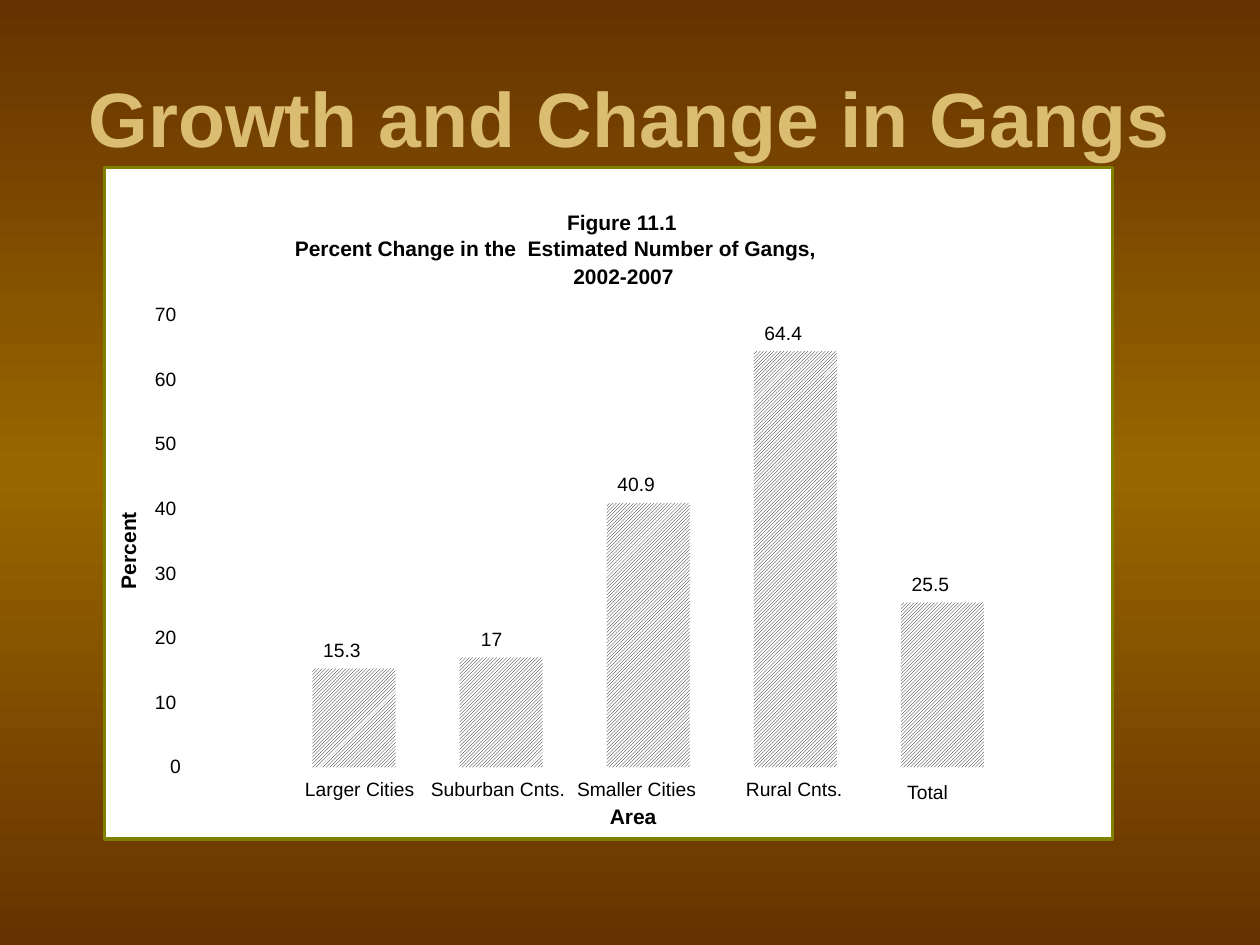
"""Build the slide on growth and change in gangs."""
import copy

import pptx
import pptx.dml.color
import pptx.enum.dml
import pptx.enum.shapes
import pptx.enum.text
import pptx.oxml.ns
import pptx.util

Inches = pptx.util.Inches

COLORS = {
    "edge": "663300",
    "middle": "996600",
    "title": "DBBD71",
    "panel": "FFFFFF",
    "border": "808000",
    "ink": "000000",
}
FORMATS = {
    "title": {"size": pptx.util.Pt(44), "bold": True},
    "heading": {"size": pptx.util.Pt(12), "bold": True},
    "label": {"size": pptx.util.Pt(11), "bold": False},
}
HEADINGS = [
    ("Area", 4.84, 6.38, 0.6, 0.25, 0),
    ("Percent", 0.68, 4.14, 0.77, 0.3, 270),
    ("Figure 11.1", 4.5, 1.66, 1.29, 0.25, 0),
    ("Percent Change in the  Estimated Number of Gangs,", 2.34, 1.87, 4.18, 0.2, 0),
    ("2002-2007", 4.55, 2.09, 1.18, 0.25, 0),
]
AREAS = [
    ("Larger Cities", 15.3, 2.42, 6.17, 1.25),
    ("Suburban Cnts.", 17, 3.42, 6.17, 1.52),
    ("Smaller Cities", 40.9, 4.58, 6.17, 1.36),
    ("Rural Cnts.", 64.4, 5.92, 6.17, 1.17),
    ("Total", 25.5, 7.2, 6.19, 0.55),
]
NUMBER_WIDTHS = {1: 0.21, 2: 0.32, 4: 0.49}
LABEL_HEIGHT = 0.23
BASELINE = 6.09
TEN_HEIGHT = 3.59 / 7
BAR_LEFT, BAR_WIDTH, BAR_STEP = 2.48, 0.66, 4.67 / 4


def rgb(name):
    """Return a named colour."""
    return pptx.dml.color.RGBColor.from_string(COLORS[name])


class SlideBuilder:
    """Hold the text style and the current slide."""

    def __init__(self, slide, font="Arial"):
        """Keep the slide and the font."""
        self.slide = slide
        self.font = font

    def background(self, names):
        """Fill the background with an evenly spaced vertical gradient."""
        fill = self.slide.background.fill
        fill.gradient()
        fill.gradient_angle = 90
        stops = self.slide.element.find(".//" + pptx.oxml.ns.qn("a:gsLst"))
        stops.insert(1, copy.deepcopy(stops[0]))
        for index, (stop, name) in enumerate(zip(fill.gradient_stops, names)):
            stop.position = index / (len(names) - 1)
            stop.color.rgb = rgb(name)

    def text(self, text, left, top, width, height, style="label", rotation=0):
        """Add a tight, unwrapped line of text."""
        shape = self.slide.shapes.add_textbox(*map(Inches, (left, top, width, height)))
        shape.rotation = rotation
        frame_format = {
            "margin_left": 0, "margin_top": 0, "margin_right": 0, "margin_bottom": 0,
            "word_wrap": False,
            "auto_size": pptx.enum.text.MSO_AUTO_SIZE.SHAPE_TO_FIT_TEXT,
        }
        for name, value in frame_format.items():
            setattr(shape.text_frame, name, value)
        run = shape.text_frame.paragraphs[0].add_run()
        run.text = text
        for name, value in {"name": self.font, **FORMATS[style]}.items():
            setattr(run.font, name, value)
        run.font.color.rgb = rgb("title" if style == "title" else "ink")
        return shape

    def title(self, text, left, top, width, height):
        """Add the centred slide title."""
        shape = self.text(text, left, top, width, height, "title")
        frame_format = {
            "word_wrap": True,
            "auto_size": pptx.enum.text.MSO_AUTO_SIZE.NONE,
            "vertical_anchor": pptx.enum.text.MSO_ANCHOR.MIDDLE,
        }
        for name, value in frame_format.items():
            setattr(shape.text_frame, name, value)
        shape.text_frame.paragraphs[0].alignment = pptx.enum.text.PP_ALIGN.CENTER

    def rectangle(self, left, top, width, height):
        """Add a rectangle without shadow."""
        shape = self.slide.shapes.add_shape(
            pptx.enum.shapes.MSO_SHAPE.RECTANGLE,
            *map(Inches, (left, top, width, height)))
        shape.shadow.inherit = False
        return shape

    def panel(self, left, top, width, height):
        """Add the bordered panel behind the bars."""
        shape = self.rectangle(left, top, width, height)
        shape.fill.solid()
        shape.fill.fore_color.rgb = rgb("panel")
        shape.line.color.rgb = rgb("border")
        shape.line.width = pptx.util.Pt(2)

    def bar(self, left, value):
        """Add a hatched bar with its value above it."""
        height = value / 10 * TEN_HEIGHT
        shape = self.rectangle(left, BASELINE - height, BAR_WIDTH, height)
        shape.fill.patterned()
        shape.fill.pattern = pptx.enum.dml.MSO_PATTERN.LIGHT_UPWARD_DIAGONAL
        shape.fill.fore_color.rgb = rgb("ink")
        shape.fill.back_color.rgb = rgb("panel")
        shape.line.fill.background()
        label = str(value)
        width = NUMBER_WIDTHS[len(label)]
        self.text(label, left + (BAR_WIDTH - width) / 2,
                  BASELINE - height - 0.24, width, LABEL_HEIGHT)


def main():
    """Build and save the presentation."""
    presentation = pptx.Presentation()
    presentation.slide_width = Inches(10)
    presentation.slide_height = Inches(7.5)
    builder = SlideBuilder(presentation.slides.add_slide(presentation.slide_layouts[6]))
    builder.background(["edge", "middle", "edge"])
    builder.title("Growth and Change in Gangs", 0.5, 0.3, 9, 1.25)
    builder.panel(0.83, 1.33, 8, 5.33)
    for text, left, top, width, height, rotation in HEADINGS:
        builder.text(text, left, top, width, height, "heading", rotation)
    for index in range(8):
        label = str(index * 10)
        builder.text(label, 1.23 if index else 1.35, 5.99 - index * TEN_HEIGHT,
                     NUMBER_WIDTHS[len(label)], LABEL_HEIGHT)
    for index, (area, value, left, top, width) in enumerate(AREAS):
        builder.text(area, left, top, width, LABEL_HEIGHT)
        builder.bar(BAR_LEFT + index * BAR_STEP, value)
    presentation.save("out.pptx")


if __name__ == "__main__":
    main()
